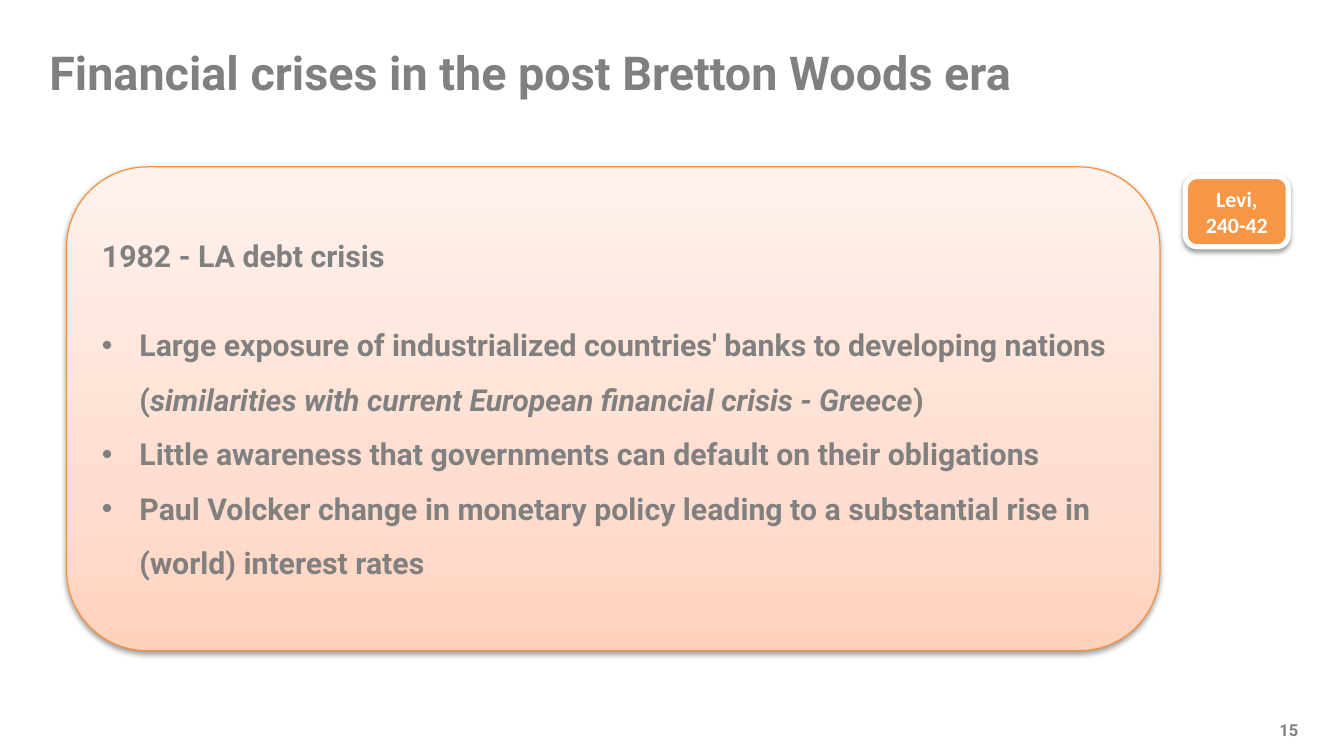
import copy

import pptx
import pptx.dml.color
import pptx.enum.shapes
import pptx.enum.text
import pptx.oxml
import pptx.oxml.ns
import pptx.util

Inches = pptx.util.Inches
Pt = pptx.util.Pt
RGBColor = pptx.dml.color.RGBColor
ALIGN = pptx.enum.text.PP_ALIGN
ANCHOR = pptx.enum.text.MSO_ANCHOR

SLIDE_HEIGHT = 6.25
SLIDE_WIDTH = SLIDE_HEIGHT * 16 / 9

GREY = RGBColor(0x80, 0x80, 0x80)
WHITE = RGBColor(0xFF, 0xFF, 0xFF)
BLACK = RGBColor(0x00, 0x00, 0x00)
ORANGE = RGBColor(0xF7, 0x96, 0x46)
PANEL_BORDER = RGBColor(0xF6, 0x92, 0x40)
PANEL_GRADIENT = [
    (0, RGBColor(0xFF, 0xD2, 0xBD)),
    (0.35, RGBColor(0xFF, 0xDE, 0xD0)),
    (1, RGBColor(0xFF, 0xF2, 0xED)),
]

CRISIS_HEADING = "1982 - LA debt crisis"
CRISIS_POINTS = [
    [
        ("Large exposure of industrialized countries' banks to developing nations (", False),
        ("similarities with current European financial crisis - Greece", True),
        (")", False),
    ],
    [("Little awareness that governments can default on their obligations", False)],
    [("Paul Volcker change in monetary policy leading to a substantial rise in "
      "(world) interest rates", False)],
]


def add_text(paragraph, text, size=18, font="Roboto", color=GREY, italic=False, align=ALIGN.LEFT):
    paragraph.alignment = align
    run = paragraph.add_run()
    run.text = text
    run.font.size = Pt(size)
    run.font.name = font
    run.font.color.rgb = color
    run.font.bold = True
    run.font.italic = italic


def add_text_box(slide, box, text, **text_format):
    shape = slide.shapes.add_textbox(*map(Inches, box))
    shape.text_frame.word_wrap = True
    add_text(shape.text_frame.paragraphs[0], text, **text_format)


def add_bullet(paragraph):
    properties = paragraph._p.get_or_add_pPr()
    properties.set("marL", str(Inches(0.31)))
    properties.set("indent", str(-Inches(0.31)))
    for tag, name, value in [("a:buFont", "typeface", "Arial"), ("a:buChar", "char", "•")]:
        element = pptx.oxml.parse_xml(f"<{tag} {pptx.oxml.ns.nsdecls('a')}/>")
        element.set(name, value)
        properties.append(element)


def add_shadow(shape):
    shape.shadow.inherit = False
    effects = shape._element.spPr.find(pptx.oxml.ns.qn("a:effectLst"))
    effects.append(pptx.oxml.parse_xml(
        f'<a:outerShdw {pptx.oxml.ns.nsdecls("a")} blurRad="{Pt(3.1)}" dist="{Pt(1.6)}" '
        f'dir="5400000" rotWithShape="0"><a:srgbClr val="{BLACK}">'
        '<a:alpha val="38000"/></a:srgbClr></a:outerShdw>'
    ))


def fill_gradient(shape, stops, angle):
    shape.fill.gradient()
    shape.fill.gradient_angle = angle
    stop_list = shape._element.spPr.find(".//" + pptx.oxml.ns.qn("a:gsLst"))
    for _ in range(len(stops) - len(stop_list)):
        stop_list.append(copy.deepcopy(stop_list[0]))
    for stop, (position, color) in zip(shape.fill.gradient_stops, stops):
        stop.position = position
        stop.color.rgb = color


def add_rounded_box(slide, box, border, border_width):
    shape = slide.shapes.add_shape(
        pptx.enum.shapes.MSO_SHAPE.ROUNDED_RECTANGLE, *map(Inches, box))
    shape.line.color.rgb = border
    shape.line.width = Pt(border_width)
    add_shadow(shape)
    shape.text_frame.word_wrap = True
    shape.text_frame.vertical_anchor = ANCHOR.MIDDLE
    return shape


def add_crisis_panel(slide, box):
    panel = add_rounded_box(slide, box, PANEL_BORDER, 0.75)
    fill_gradient(panel, PANEL_GRADIENT, 90)
    heading = panel.text_frame.paragraphs[0]
    heading.space_after = Pt(21)
    add_text(heading, CRISIS_HEADING)
    for point in CRISIS_POINTS:
        paragraph = panel.text_frame.add_paragraph()
        add_bullet(paragraph)
        paragraph.line_spacing = 1.5
        for text, italic in point:
            add_text(paragraph, text, italic=italic)


def add_reading_badge(slide, box):
    badge = add_rounded_box(slide, box, WHITE, 3)
    badge.fill.solid()
    badge.fill.fore_color.rgb = ORANGE
    add_text(badge.text_frame.paragraphs[0], "Levi, 240-42",
             size=13, font="Calibri", color=WHITE, align=ALIGN.CENTER)


def build_crisis_slide(presentation):
    slide = presentation.slides.add_slide(presentation.slide_layouts[6])
    add_text_box(slide, (0.31, 0.31, 10.54, 0.57),
                 "Financial crises in the post Bretton Woods era", size=27.8)
    add_crisis_panel(slide, (0.55, 1.38, 9.04, 4))
    add_reading_badge(slide, (9.8, 1.46, 0.85, 0.58))
    add_text_box(slide, (10.46, 5.9, 0.39, 0.27), "15", size=9.8, align=ALIGN.CENTER)


def main():
    presentation = pptx.Presentation()
    presentation.slide_width = Inches(SLIDE_WIDTH)
    presentation.slide_height = Inches(SLIDE_HEIGHT)
    build_crisis_slide(presentation)
    presentation.save("out.pptx")


if __name__ == "__main__":
    main()
